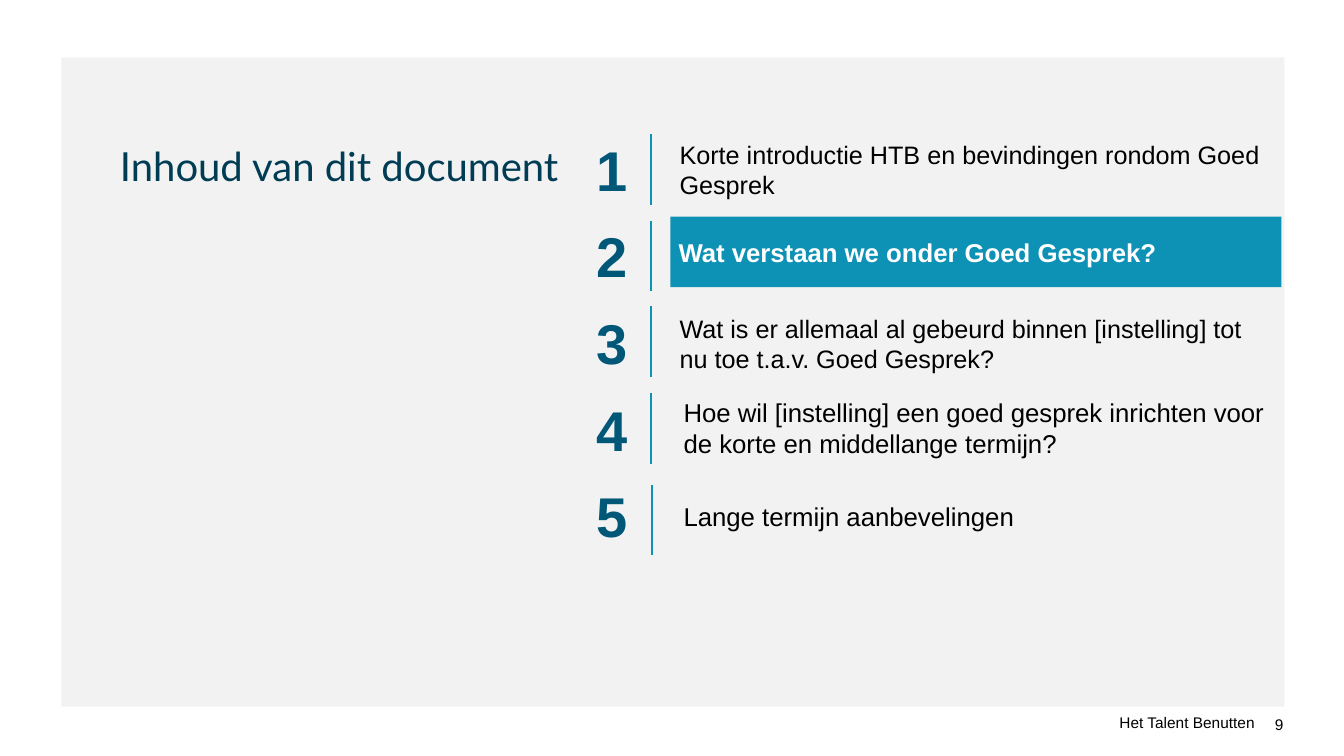
import pptx
import pptx.util
import pptx.dml.color
import pptx.enum.shapes
import pptx.enum.text
import pptx.oxml.ns
import lxml.etree

Inches = pptx.util.Inches
ALIGN = pptx.enum.text.PP_ALIGN
ANCHOR = pptx.enum.text.MSO_ANCHOR
COLOURS = {
    "panel": "F2F2F2",
    "title": "003C54",
    "number": "005777",
    "accent": "0D92B6",
    "black": "000000",
    "white": "FFFFFF",
}


def rgb(name):
    return pptx.dml.color.RGBColor.from_string(COLOURS[name])


deck = pptx.Presentation()
deck.slide_width, deck.slide_height = Inches(13.33), Inches(7.5)
slide = deck.slides.add_slide(deck.slide_layouts[6])


def add_text(text, left, top, width, height, size, colour="black", font="Arial", bold=False,
             align=ALIGN.LEFT, anchor=ANCHOR.MIDDLE, inset=0, wrap=True, fill=None):
    box = [Inches(length) for length in (left, top, width, height)]
    if fill:
        holder = slide.shapes.add_shape(pptx.enum.shapes.MSO_SHAPE.RECTANGLE, *box)
        holder.shadow.inherit = False
        holder.fill.solid()
        holder.fill.fore_color.rgb = rgb(fill)
        holder.line.fill.background()
    else:
        holder = slide.shapes.add_textbox(*box)
    frame = holder.text_frame
    frame.word_wrap = wrap
    frame.vertical_anchor = anchor
    frame.margin_left = frame.margin_right = Inches(inset)
    frame.margin_top = frame.margin_bottom = Inches(inset)
    paragraph = frame.paragraphs[0]
    paragraph.alignment = align
    if text:
        run = paragraph.add_run()
        run.text = text
        run.font.size = pptx.util.Pt(size)
        run.font.name = font
        run.font.bold = bold
        run.font.color.rgb = rgb(colour)


# Panel and title
add_text("", 0.61, 0.57, 12.13, 6.44, 18, fill="panel")
add_text("Inhoud van dit document", 1.19, 1.4, 4.38, 0.42, 28.6,
         colour="title", font="Lato", anchor=ANCHOR.TOP)

# Footer
add_text("9", 12.45, 7.09, 0.28, 0.19, 11, align=ALIGN.RIGHT, wrap=False)
add_text("Het Talent Benutten", 11.01, 7.07, 1.53, 0.19, 11,
         align=ALIGN.CENTER, anchor=ANCHOR.BOTTOM, wrap=False)

# Chapters: text, left, top, size, divider left, divider top
chapters = [
    ("Korte introductie HTB en bevindingen rondom Goed Gesprek", 6.66, 1.33, 18, 6.46, 1.33),
    ("Wat verstaan we onder Goed Gesprek?", 6.65, 2.15, 18.4, 6.46, 2.19),
    ("Wat is er allemaal al gebeurd binnen [instelling] tot nu toe t.a.v. Goed Gesprek?",
     6.66, 3.06, 18, 6.46, 3.04),
    ("Hoe wil [instelling] een goed gesprek inrichten voor de korte en middellange termijn?",
     6.7, 3.89, 18.4, 6.46, 3.9),
    ("Lange termijn aanbevelingen", 6.7, 4.77, 18.4, 6.47, 4.81),
]
current_chapter = 2
row_top, row_pitch, row_height = 1.41, 0.86, 0.7

for number, (chapter, left, top, size, divider_x, divider_top) in enumerate(chapters, 1):
    add_text(str(number), 5.83, row_top + (number - 1) * row_pitch, 0.49, 0.53, 40,
             colour="number", bold=True, align=ALIGN.CENTER, wrap=False)

    divider = slide.shapes.add_connector(
        pptx.enum.shapes.MSO_CONNECTOR.STRAIGHT, Inches(divider_x), Inches(divider_top),
        Inches(divider_x), Inches(divider_top + row_height))
    divider.line.color.rgb = rgb("accent")
    divider.line.width = pptx.util.Pt(1.5)
    lxml.etree.SubElement(divider._element.spPr, pptx.oxml.ns.qn("a:effectLst"))

    highlighted = number == current_chapter
    add_text(chapter, left, top, 6.06, row_height, size, inset=0.08, bold=highlighted,
             colour="white" if highlighted else "black",
             fill="accent" if highlighted else None)

deck.save("out.pptx")
